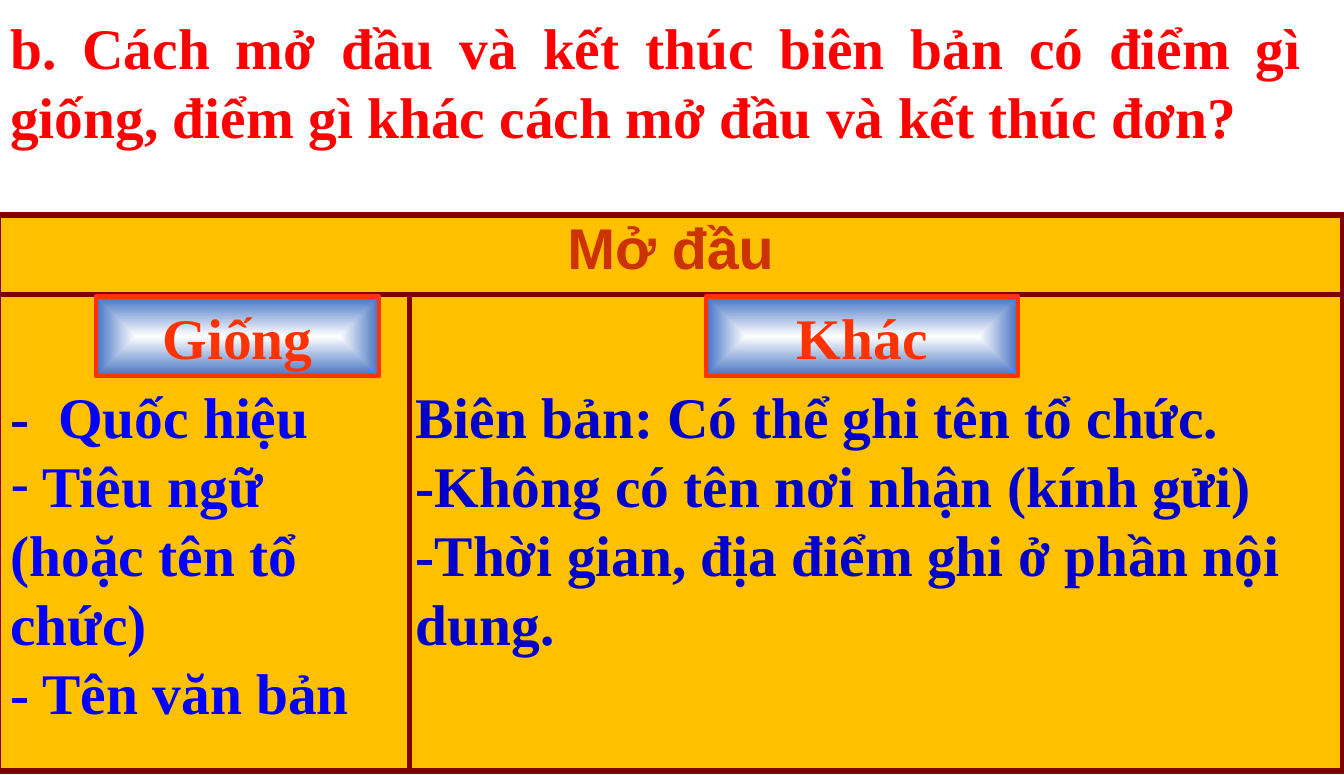
from collections import namedtuple

from lxml.etree import SubElement
from pptx import Presentation
from pptx.dml.color import RGBColor
from pptx.enum.shapes import MSO_SHAPE as Shape
from pptx.enum.text import MSO_ANCHOR as Anchor, MSO_AUTO_SIZE as AutoSize, PP_ALIGN as Align
from pptx.oxml import parse_xml
from pptx.oxml.ns import nsdecls, qn
from pptx.util import Cm, Pt

Box = namedtuple("Box", "left top width height")
SERIF, SANS = "Times New Roman", "Arial"
RED, ORANGE, RUST, MAROON = "FF0000", "FF3300", "CC3300", "800000"
BLUE, NAVY, GOLD, WHITE, STEEL = "0000FF", "0000CC", "FFC000", "FFFFFF", "4472C4"


def color(value):
    """Turn a hex string into a colour."""
    return RGBColor.from_string(value)


def place(shape, box):
    """Move a shape to a box given in centimetres."""
    shape.left, shape.top, shape.width, shape.height = map(Cm, box)


def write(para, text, font=SERIF, size=40, fill=BLUE, bold=True, align=None):
    """Add a formatted run to a paragraph."""
    span = para.add_run()
    span.text = text
    span.font.name, span.font.size, span.font.bold = font, Pt(size), bold
    span.font.color.rgb = color(fill)
    para.space_before = Pt(0)
    if align is not None:
        para.alignment = align


def prepare(shape, anchor=Anchor.TOP):
    """Give a shape a wrapping text frame of fixed size and return it."""
    frame = shape.text_frame
    frame.word_wrap = True
    frame.auto_size = AutoSize.NONE
    frame.vertical_anchor = anchor
    return frame


def set_bullet(para, mark=None):
    """Remove the indent and set a bullet character, or none."""
    props = para._p.get_or_add_pPr()
    props.set("marL", "0")
    props.set("indent", "0")
    if mark:
        SubElement(props, qn("a:buChar")).set("char", mark)
    else:
        SubElement(props, qn("a:buNone"))


def add_question(page, box, text):
    """Put the question in the title placeholder."""
    place(page.shapes.title, box)
    frame = prepare(page.shapes.title)
    write(frame.paragraphs[0], text, fill=RED, align=Align.JUSTIFY)


def add_list(holder, box, lines):
    """Fill a body placeholder with (bullet, spans) lines and bring it forward."""
    place(holder, box)
    frame = prepare(holder)
    for index, (mark, spans) in enumerate(lines):
        para = frame.add_paragraph() if index else frame.paragraphs[0]
        for text, fill in spans:
            write(para, text, fill=fill)
        set_bullet(para, mark)
    holder.element.getparent().append(holder.element)


def format_cell(cell):
    """Fill a cell and draw its four borders."""
    cell.fill.solid()
    cell.fill.fore_color.rgb = color(GOLD)
    props = cell._tc.get_or_add_tcPr()
    for index, side in enumerate("LRTB"):
        props.insert(index, parse_xml(
            f'<a:ln{side} {nsdecls("a")} w="{Pt(4.5)}"><a:solidFill>'
            f'<a:srgbClr val="{MAROON}"/></a:solidFill></a:ln{side}>'))


def add_grid(page, box, heading, first_column, first_row):
    """Add the table with a heading across two columns."""
    table = page.shapes.add_table(2, 2, *map(Cm, box)).table
    for column, width in zip(table.columns, (first_column, box.width - first_column)):
        column.width = Cm(width)
    for row, height in zip(table.rows, (first_row, box.height - first_row)):
        row.height = Cm(height)
    for cell in table.iter_cells():
        format_cell(cell)
    title = table.cell(0, 0)
    title.merge(table.cell(0, 1))
    title.margin_left = title.margin_right = Cm(0.18)
    title.margin_top = title.margin_bottom = Cm(0.08)
    write(title.text_frame.paragraphs[0], heading, font=SANS, fill=RUST, align=Align.CENTER)


def add_badge(page, box, text):
    """Add a column label with a gradient that is light in the middle."""
    badge = page.shapes.add_shape(Shape.RECTANGLE, *map(Cm, box))
    badge.shadow.inherit = False
    badge.line.color.rgb = color(ORANGE)
    badge.line.width = Pt(3)
    outline = badge.element.spPr.find(qn("a:ln"))
    outline.addprevious(parse_xml(
        f'<a:gradFill {nsdecls("a")} rotWithShape="1"><a:gsLst>'
        f'<a:gs pos="0"><a:srgbClr val="{WHITE}"/></a:gs>'
        f'<a:gs pos="100000"><a:srgbClr val="{STEEL}"/></a:gs></a:gsLst>'
        '<a:path path="shape"><a:fillToRect l="50000" t="50000" r="50000" b="50000"/>'
        '</a:path></a:gradFill>'))
    write(prepare(badge).paragraphs[0], text, fill=ORANGE, align=Align.CENTER)


def main():
    """Build the comparison slide."""
    deck = Presentation()
    deck.slide_width, deck.slide_height = Cm(33.02), Cm(19.05)
    page = deck.slides.add_slide(deck.slide_layouts[3])
    same, different = list(page.placeholders)[1:3]

    add_question(page, Box(0, 0.18, 32.23, 3.68),
                 "b. Cách mở đầu và kết thúc biên bản có điểm gì giống, "
                 "điểm gì khác cách mở đầu và kết thúc đơn?")
    add_grid(page, Box(-0.05, 5.28, 33.05, 13.67), "Mở đầu", 10.11, 1.96)
    add_badge(page, Box(2.36, 7.29, 6.96, 1.96), "Giống")
    add_badge(page, Box(17.35, 7.29, 7.67, 1.96), "Khác")
    add_list(same, Box(0, 9.25, 9.96, 8.81), [
        (None, [("-  ", NAVY), ("Quốc hiệu", BLUE)]),
        ("-", [(" Tiêu ngữ (hoặc tên tổ chức)", BLUE)]),
        (None, [("- Tên văn bản", BLUE)]),
    ])
    add_list(different, Box(9.96, 9.25, 23.01, 7.09), [
        (None, [(text, NAVY)]) for text in (
            "Biên bản: Có thể ghi tên tổ chức.",
            "-Không có tên nơi nhận (kính gửi)",
            "-Thời gian, địa điểm ghi ở phần nội dung.")
    ])
    deck.save("out.pptx")


if __name__ == "__main__":
    main()
